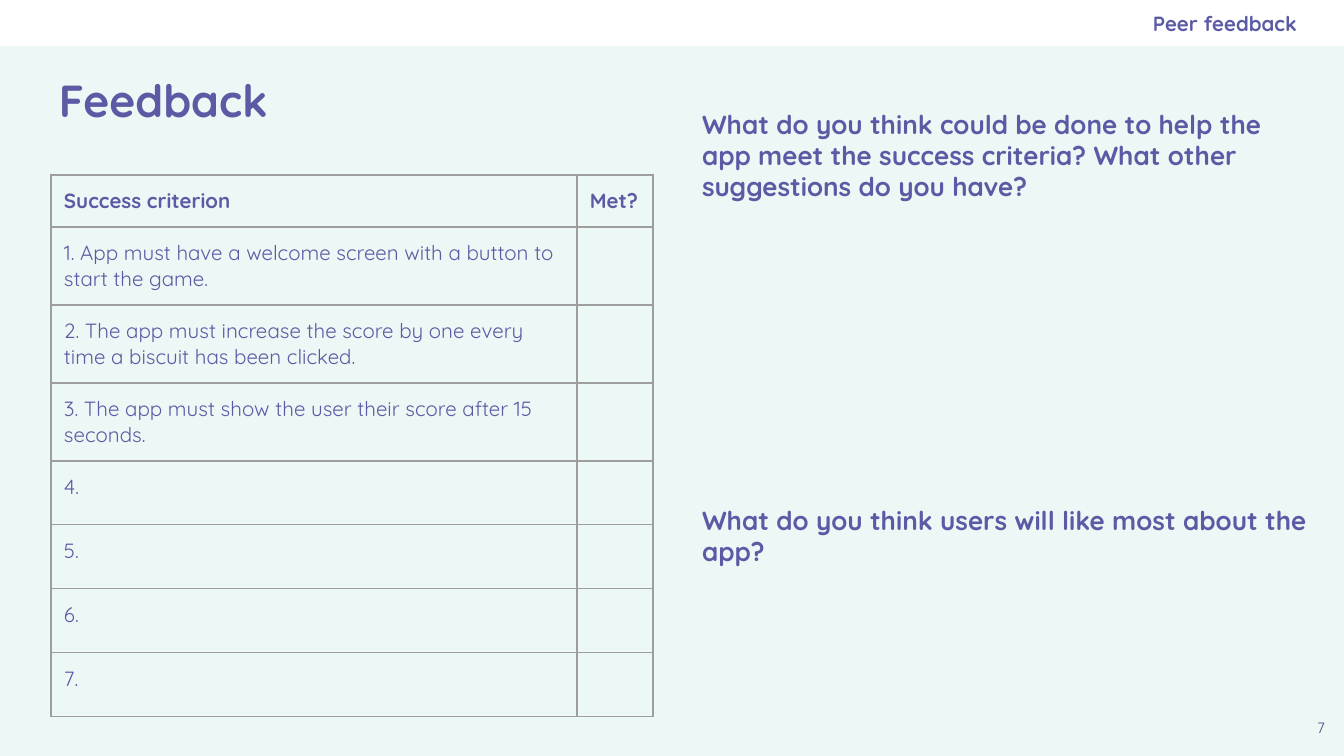
from collections import namedtuple
from dataclasses import dataclass

from lxml.etree import SubElement
from pptx import Presentation
from pptx.dml.color import RGBColor
from pptx.enum.shapes import MSO_SHAPE
from pptx.enum.text import MSO_ANCHOR, PP_ALIGN
from pptx.oxml.ns import qn
from pptx.util import Emu, Pt

EMU_PER_PX = 914400 / 134.4
INSET = 13
Box = namedtuple("Box", "left top width height")


@dataclass(frozen=True)
class Theme:
    """Colours, font and type sizes of the slide."""
    background: str = "ECF8F5"
    band: str = "FFFFFF"
    text: str = "5B5BA5"
    number: str = "494985"
    rule: str = "9E9E9E"
    font: str = "Quicksand"
    title_size: int = 24
    question_size: int = 14
    body_size: int = 11
    number_size: int = 8
    rule_width: float = 0.75


THEME = Theme()
CRITERIA = [
    "1. App must have a welcome screen with a button to start the game.",
    "2. The app must increase the score by one every time a biscuit has been clicked.",
    "3. The app must show the user their score after 15 seconds.",
    "4.", "5.", "6.", "7.",
]
SUGGESTIONS = ("What do you think could be done to help the app meet the success "
               "criteria? What other suggestions do you have?")
LIKES = "What do you think users will like most about the app?"


def px(length):
    """Turn pixels into EMU."""
    return Emu(round(length * EMU_PER_PX))


def place(box):
    """Turn a box in pixels into EMU arguments."""
    return [px(length) for length in box]


def set_all(target, values):
    """Set each named attribute on the target."""
    for name, value in values.items():
        setattr(target, name, value)


def style_font(font, size, bold, color=THEME.text):
    """Apply the theme font with a size, weight and colour."""
    set_all(font, {"name": THEME.font, "size": Pt(size), "bold": bold})
    font.color.rgb = RGBColor.from_string(color)


def add_text(slide, box, text, size, bold=True, color=THEME.text,
             align=PP_ALIGN.LEFT, anchor=MSO_ANCHOR.TOP, right=INSET):
    """Add a wrapped one-paragraph text box."""
    frame = slide.shapes.add_textbox(*place(box)).text_frame
    set_all(frame, {
        "word_wrap": True, "vertical_anchor": anchor,
        "margin_left": px(INSET), "margin_top": px(INSET),
        "margin_right": px(right), "margin_bottom": px(INSET),
    })
    paragraph = frame.paragraphs[0]
    set_all(paragraph, {"text": text, "alignment": align})
    style_font(paragraph.runs[0].font, size, bold, color)


def add_header(slide, box):
    """Add the top band with the lesson part at its right."""
    band = slide.shapes.add_shape(MSO_SHAPE.RECTANGLE, *place(box))
    band.shadow.inherit = False
    band.fill.solid()
    band.fill.fore_color.rgb = RGBColor.from_string(THEME.band)
    band.line.fill.background()
    label = Box(box.left + box.width - 571, box.top, 524, box.height)
    add_text(slide, label, "Peer feedback", THEME.body_size,
             align=PP_ALIGN.RIGHT, anchor=MSO_ANCHOR.MIDDLE, right=0)


def style_cell(cell, text, bold):
    """Fill in one cell and draw its four borders."""
    set_all(cell, {"text": text, **{f"margin_{side}": px(INSET)
                                   for side in ("left", "right", "top", "bottom")}})
    style_font(cell.text_frame.paragraphs[0].font, THEME.body_size, bold)
    for run in cell.text_frame.paragraphs[0].runs:
        style_font(run.font, THEME.body_size, bold)
    properties = cell._tc.get_or_add_tcPr()
    for edge in ("a:lnL", "a:lnR", "a:lnT", "a:lnB"):
        line = SubElement(properties, qn(edge), w=str(Pt(THEME.rule_width)))
        fill = SubElement(line, qn("a:solidFill"))
        SubElement(fill, qn("a:srgbClr"), val=THEME.rule)
    cell.fill.background()


def add_criteria_table(slide, box):
    """Add the table of success criteria with a column to mark."""
    rows = [("Success criterion", "Met?")] + [(text, "") for text in CRITERIA]
    heights = [52] + [78] * 3 + [64] * 4
    table = slide.shapes.add_table(len(rows), 2, *place(box)).table
    set_all(table, {"first_row": False, "horz_banding": False})
    for column, width in zip(table.columns, (box.width - 76, 76)):
        column.width = px(width)
    for index, (row, height) in enumerate(zip(table.rows, heights)):
        row.height = px(height)
        for cell, text in zip(row.cells, rows[index]):
            style_cell(cell, text, bold=index == 0)


def add_questions(slide, box):
    """Add the two questions of the right column."""
    for offset, height, text in ((0, 73, SUGGESTIONS), (396, 51, LIKES)):
        question = Box(box.left, box.top + offset, box.width, height)
        add_text(slide, question, text, THEME.question_size)


def build_feedback_slide(presentation, box):
    """Build the peer feedback slide inside the given box."""
    slide = presentation.slides.add_slide(presentation.slide_layouts[6])
    slide.background.fill.solid()
    slide.background.fill.fore_color.rgb = RGBColor.from_string(THEME.background)
    left, top = box.left, box.top
    add_header(slide, Box(left, top, box.width, 46))
    add_text(slide, Box(left + 46, top + 47, 1253, 105), "Feedback",
             THEME.title_size, anchor=MSO_ANCHOR.MIDDLE)
    add_text(slide, Box(left + box.width - 46, top + box.height - 46, 46, 46), "7",
             THEME.number_size, bold=False, color=THEME.number, align=PP_ALIGN.CENTER)
    add_criteria_table(slide, Box(left + 51, top + 175, 602, 542))
    add_questions(slide, Box(left + 689, top + 95, 642, 447))


def main():
    """Create and save the presentation."""
    page = Box(0, 0, 1344, 756)
    presentation = Presentation()
    set_all(presentation, {"slide_width": px(page.width), "slide_height": px(page.height)})
    build_feedback_slide(presentation, page)
    presentation.save("out.pptx")


if __name__ == "__main__":
    main()
